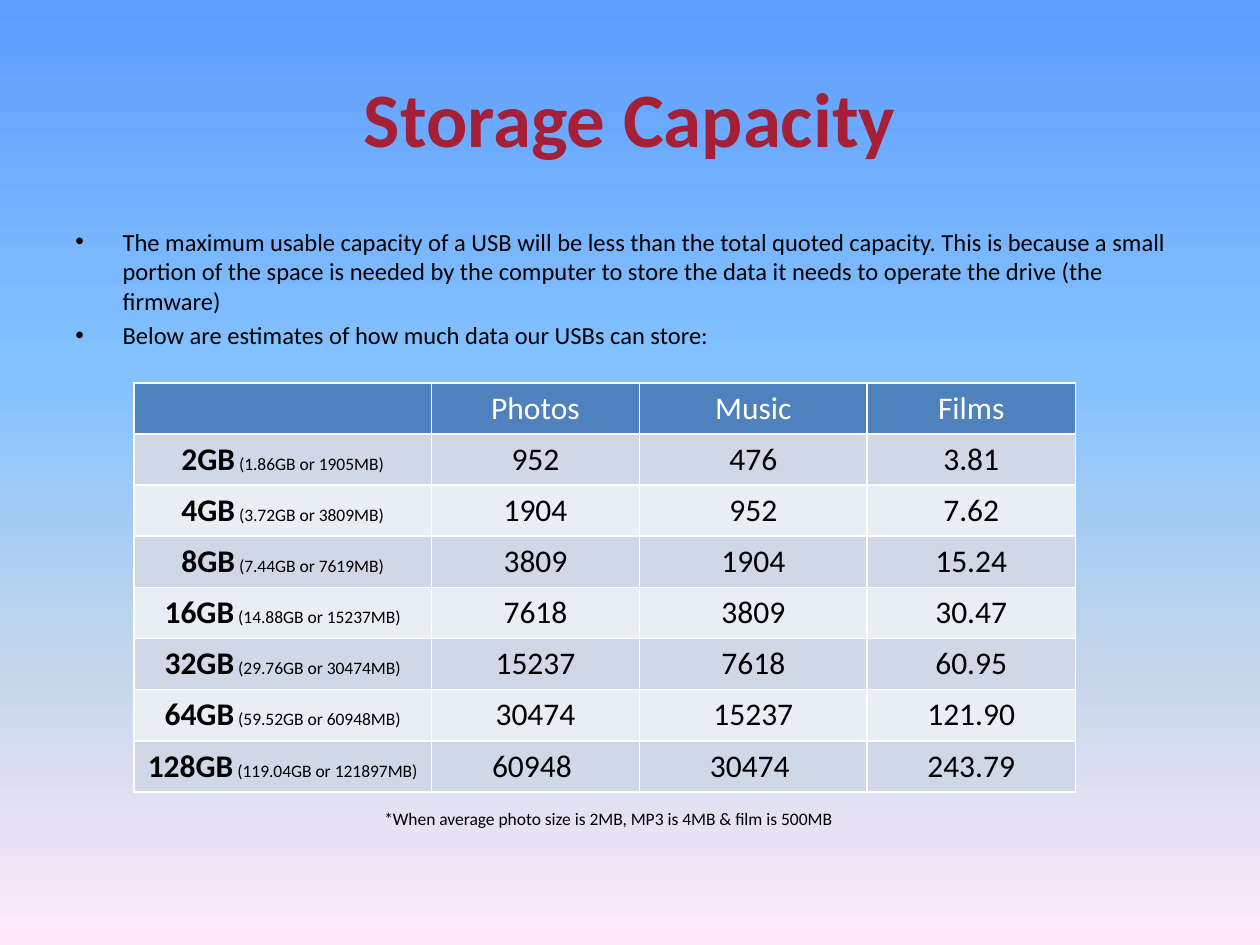
from dataclasses import dataclass

from lxml.etree import SubElement
from pptx import Presentation
from pptx.dml.color import RGBColor
from pptx.enum.text import MSO_ANCHOR as Anchor, PP_ALIGN as Align
from pptx.oxml import parse_xml
from pptx.oxml.ns import nsdecls, qn
from pptx.util import Pt


@dataclass(frozen=True)
class Theme:
    font: str = "Calibri"
    title: str = "A52036"
    ink: str = "000000"
    light: str = "FFFFFF"
    header: str = "4F81BD"
    bands: tuple = ("D0D8E8", "E9EDF4")
    sky: tuple = ((0, "5E9EFF"), (40, "85C2FF"), (70, "C4D6EB"), (100, "FFEBFA"))
    title_size: float = 44
    body_size: float = 14
    cell_size: float = 18
    note_size: float = 10


THEME = Theme()

BULLETS = (
    "The maximum usable capacity of a USB will be less than the total quoted capacity. "
    "This is because a small portion of the space is needed by the computer to store "
    "the data it needs to operate the drive (the firmware)",
    "Below are estimates of how much data our USBs can store:",
)
HEADINGS = ("", "Photos", "Music", "Films")
CAPACITIES = (
    ("2GB", "1.86GB or 1905MB", "952", "476", "3.81"),
    ("4GB", "3.72GB or 3809MB", "1904", "952", "7.62"),
    ("8GB", "7.44GB or 7619MB", "3809", "1904", "15.24"),
    ("16GB", "14.88GB or 15237MB", "7618", "3809", "30.47"),
    ("32GB", "29.76GB or 30474MB", "15237", "7618", "60.95"),
    ("64GB", "59.52GB or 60948MB", "30474", "15237", "121.90"),
    ("128GB", "119.04GB or 121897MB", "60948 ", "30474 ", "243.79"),
)
COLUMN_WIDTHS = (170, 119, 130, 119)


def add_span(para, text, size=THEME.cell_size, color=THEME.ink, bold=False):
    span = para.add_run()
    span.text = text
    span.font.name = THEME.font
    span.font.size = Pt(size)
    span.font.bold = bold
    span.font.color.rgb = RGBColor.from_string(color)


def add_frame(page, box, anchor=Anchor.TOP):
    frame = page.shapes.add_textbox(*map(Pt, box)).text_frame
    frame.word_wrap = True
    frame.vertical_anchor = anchor
    return frame


def paint_background(page):
    fill = page.background.fill
    fill.gradient()
    fill.gradient_angle = 270
    stops = next(page.element.iter(qn("a:gsLst")))
    for stop in list(stops):
        stops.remove(stop)
    for percent, color in THEME.sky:
        stop = SubElement(stops, qn("a:gs"), pos=str(percent * 1000))
        SubElement(stop, qn("a:srgbClr"), val=color)


def add_title(page, box):
    para = add_frame(page, box, Anchor.MIDDLE).paragraphs[0]
    para.alignment = Align.CENTER
    add_span(para, "Storage Capacity", size=THEME.title_size, color=THEME.title, bold=True)


def add_bullets(page, box):
    frame = add_frame(page, box)
    for index, text in enumerate(BULLETS):
        para = frame.add_paragraph() if index else frame.paragraphs[0]
        para.space_before = Pt(THEME.body_size * 0.2)
        properties = para._p.get_or_add_pPr()
        properties.set("marL", str(Pt(27)))
        properties.set("indent", str(Pt(-27)))
        SubElement(properties, qn("a:buFont"), typeface="Arial")
        SubElement(properties, qn("a:buChar"), char="•")
        add_span(para, text, size=THEME.body_size)


def style_cell(cell, color):
    cell.fill.solid()
    cell.fill.fore_color.rgb = RGBColor.from_string(color)
    properties = cell._tc.get_or_add_tcPr()
    for index, side in enumerate("LRTB"):
        border = parse_xml(
            f'<a:ln{side} {nsdecls("a")} w="{Pt(1)}"><a:solidFill>'
            f'<a:srgbClr val="{THEME.light}"/></a:solidFill></a:ln{side}>'
        )
        properties.insert(index, border)
    para = cell.text_frame.paragraphs[0]
    para.alignment = Align.CENTER
    return para


def add_capacity_table(page, box):
    row_count = len(CAPACITIES) + 1
    table = page.shapes.add_table(row_count, len(HEADINGS), *map(Pt, box)).table
    for column, width in zip(table.columns, COLUMN_WIDTHS):
        column.width = Pt(width)
    for row in table.rows:
        row.height = Pt(box[3] / row_count)
    for column, heading in enumerate(HEADINGS):
        para = style_cell(table.cell(0, column), THEME.header)
        if heading:
            add_span(para, heading, color=THEME.light)
    for row, (size, usable, *counts) in enumerate(CAPACITIES, start=1):
        band = THEME.bands[(row - 1) % len(THEME.bands)]
        para = style_cell(table.cell(row, 0), band)
        add_span(para, size, bold=True)
        add_span(para, f" ({usable})", size=THEME.note_size)
        for column, count in enumerate(counts, start=1):
            add_span(style_cell(table.cell(row, column), band), count)


def add_footnote(page, box):
    para = add_frame(page, box).paragraphs[0]
    add_span(para, "*When average photo size is 2MB, MP3 is 4MB & film is 500MB", size=THEME.note_size)


def main():
    deck = Presentation()
    deck.slide_width, deck.slide_height = Pt(720), Pt(540)
    page = deck.slides.add_slide(deck.slide_layouts[6])
    paint_background(page)
    add_title(page, (36, 21.6, 648, 90))
    add_bullets(page, (36, 126, 648, 356.4))
    add_capacity_table(page, (76.5, 218.75, sum(COLUMN_WIDTHS), 234))
    add_footnote(page, (212.5, 458, 300, 19.4))
    deck.save("out.pptx")


if __name__ == "__main__":
    main()
